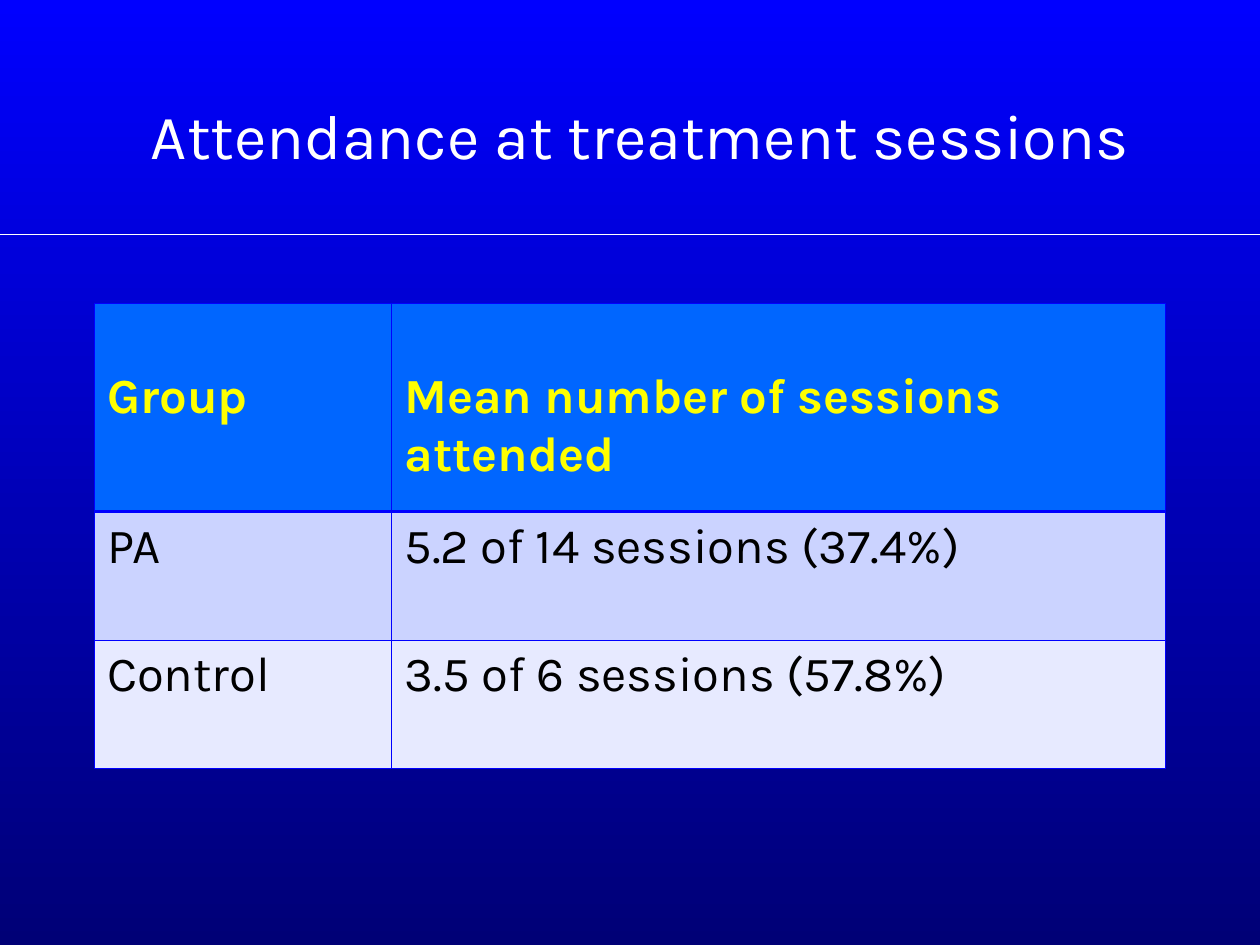
from lxml import etree
from pptx import Presentation
from pptx.dml.color import RGBColor
from pptx.enum.shapes import MSO_CONNECTOR
from pptx.enum.text import MSO_ANCHOR, PP_ALIGN
from pptx.oxml.ns import qn
from pptx.util import Inches, Pt

STRAIGHT = MSO_CONNECTOR.STRAIGHT
MIDDLE = MSO_ANCHOR.MIDDLE
CENTER = PP_ALIGN.CENTER
LEFT = PP_ALIGN.LEFT

FONT = "Karla"
COLORS = {
    "background_top": "0000FF",
    "background_bottom": "000076",
    "title": "FFFFFF",
    "header_text": "FFFF00",
    "body_text": "000000",
    "header_fill": "0066FF",
    "row_fill": "CBD3FF",
    "alternate_fill": "E7EAFF",
    "border": "0000FF",
}
ROWS = [
    ("Group", "Mean number of sessions attended"),
    ("PA", "5.2 of 14 sessions (37.4%)"),
    ("Control", "3.5 of 6 sessions (57.8%)"),
]
ROW_FILLS = ["header_fill", "row_fill", "alternate_fill"]
COLUMN_WIDTHS = [2.36, 6.14]
ROW_HEIGHTS = [1.65, 1.02, 1.02]
THIN, THICK = 0.45, 1.47


def color(name):
    return RGBColor.from_string(COLORS[name])


def write_text(text_frame, text, size, color_name, bold=False, align=LEFT, spacing=1.0):
    text_frame.word_wrap = True
    paragraph = text_frame.paragraphs[0]
    paragraph.alignment = align
    paragraph.line_spacing = spacing
    run = paragraph.add_run()
    run.text = text
    run.font.name = FONT
    run.font.size = Pt(size)
    run.font.bold = bold
    run.font.color.rgb = color(color_name)


def paint_background(slide):
    fill = slide.background.fill
    fill.gradient()
    fill.gradient_angle = 270
    for stop, name in zip(fill.gradient_stops, ("background_top", "background_bottom")):
        stop.color.rgb = color(name)


def add_title(slide, left, top, width, height):
    title = slide.shapes.add_textbox(Inches(left), Inches(top), Inches(width), Inches(height))
    title.text_frame.vertical_anchor = MIDDLE
    write_text(title.text_frame, "Attendance at treatment sessions", 36, "title", align=CENTER)


def add_divider(slide, left, top, width):
    divider = slide.shapes.add_connector(
        STRAIGHT, Inches(left), Inches(top), Inches(left + width), Inches(top)
    )
    divider.line.color.rgb = color("title")
    divider.line.width = Pt(0.75)
    etree.SubElement(divider._element.spPr, qn("a:effectLst"))


def set_borders(cell, widths):
    properties = cell._tc.get_or_add_tcPr()
    for side, width in widths.items():
        line = etree.SubElement(properties, qn(f"a:ln{side}"), w=str(Pt(width)))
        solid = etree.SubElement(line, qn("a:solidFill"))
        etree.SubElement(solid, qn("a:srgbClr"), val=COLORS["border"])


def add_attendance_table(slide, left, top, width, height):
    table = slide.shapes.add_table(
        len(ROWS), len(COLUMN_WIDTHS), Inches(left), Inches(top), Inches(width), Inches(height)
    ).table
    for column, column_width in zip(table.columns, COLUMN_WIDTHS):
        column.width = Inches(column_width)
    for row_index, values in enumerate(ROWS):
        table.rows[row_index].height = Inches(ROW_HEIGHTS[row_index])
        is_header = row_index == 0
        borders = {
            "L": THIN,
            "R": THIN,
            "T": THICK if row_index == 1 else THIN,
            "B": THICK if is_header else THIN,
        }
        for column_index, value in enumerate(values):
            cell = table.cell(row_index, column_index)
            set_borders(cell, borders)
            cell.fill.solid()
            cell.fill.fore_color.rgb = color(ROW_FILLS[row_index])
            cell.margin_top = Inches(0.51 if is_header else 0.05)
            text_color = "header_text" if is_header else "body_text"
            write_text(cell.text_frame, value, 28, text_color, bold=is_header, spacing=1.01)


def main():
    presentation = Presentation()
    presentation.slide_width = Inches(10)
    presentation.slide_height = Inches(7.5)
    slide = presentation.slides.add_slide(presentation.slide_layouts[6])
    paint_background(slide)
    add_title(slide, 0.83, 0.28, 8.5, 1.57)
    add_divider(slide, 0, 1.86, 10)
    add_attendance_table(slide, 0.75, 2.41, sum(COLUMN_WIDTHS), sum(ROW_HEIGHTS))
    presentation.save("out.pptx")


if __name__ == "__main__":
    main()
